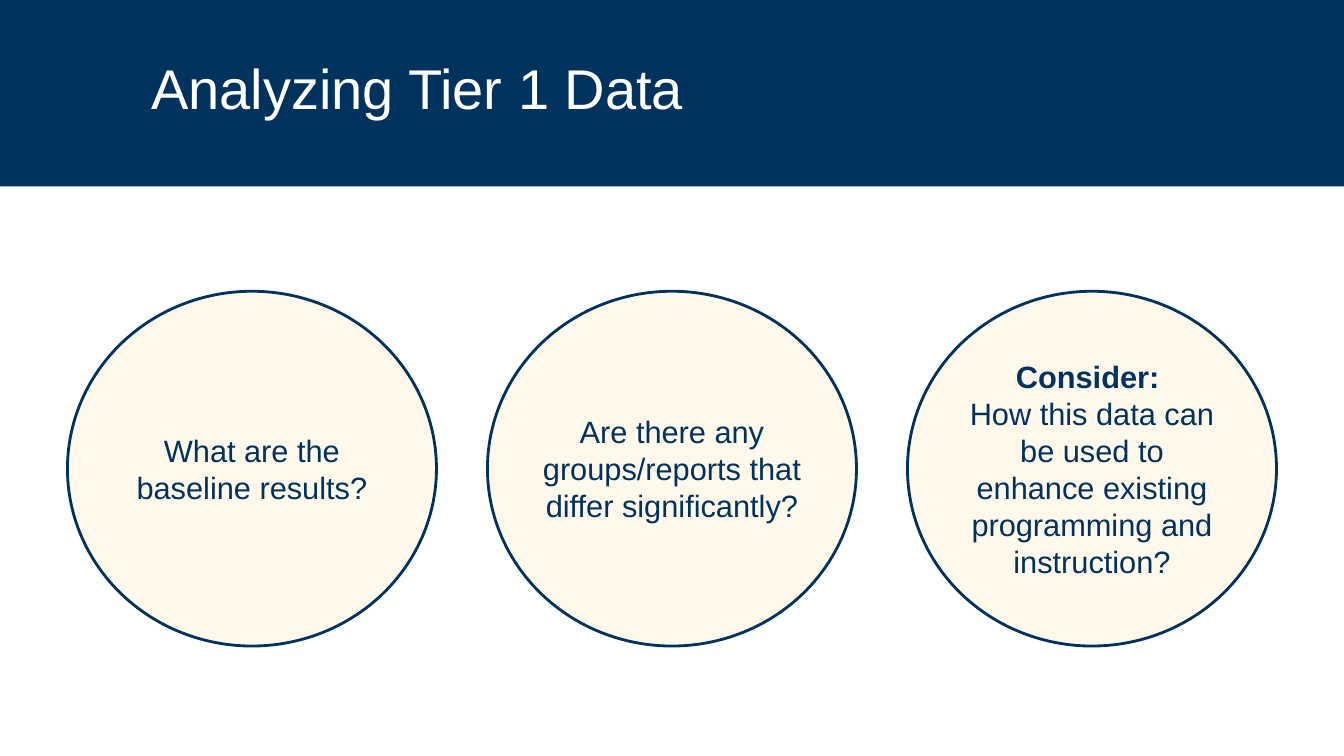
from pptx import Presentation
from pptx.dml.color import RGBColor
from pptx.enum.shapes import MSO_SHAPE as Preset
from pptx.enum.text import MSO_ANCHOR as Anchor, PP_ALIGN as Align
from pptx.util import Cm, Pt

NAVY = RGBColor(0x00, 0x32, 0x5E)
CREAM = RGBColor(0xFF, 0xF8, 0xEB)
WHITE = RGBColor(0xFF, 0xFF, 0xFF)

PAGE_WIDTH, PAGE_HEIGHT = 33.87, 19.05
BANNER_HEIGHT = 4.7
CIRCLE_WIDTH, CIRCLE_HEIGHT = 9.3, 8.94
CIRCLE_TOP, SIDE_MARGIN = 7.34, 1.7

# Each question is a list of (text, bold) paragraphs.
QUESTIONS = [
    [("What are the baseline results?", False)],
    [("Are there any groups/reports that differ significantly?", False)],
    [("Consider: ", True),
     ("How this data can be used to enhance existing programming and instruction?", False)],
]


def write(para, text, size=22, color=NAVY, bold=False, align=Align.CENTER, spacing=None):
    para.alignment = align
    para.line_spacing = spacing
    span = para.add_run()
    span.text = text
    span.font.name = "Arial"
    span.font.size = Pt(size)
    span.font.bold = bold
    span.font.color.rgb = color


class Page:
    """Holds the current slide and draws its elements, with lengths in centimetres."""

    def __init__(self, deck):
        self.shapes = deck.slides.add_slide(deck.slide_layouts[6]).shapes

    def shape(self, preset, left, top, width, height, fill, line=None):
        shape = self.shapes.add_shape(preset, Cm(left), Cm(top), Cm(width), Cm(height))
        shape.shadow.inherit = False
        shape.fill.solid()
        shape.fill.fore_color.rgb = fill
        if line is None:
            shape.line.fill.background()
        else:
            shape.line.color.rgb = line
            shape.line.width = Pt(2)
        return shape

    def title(self, text, left, top, width, height):
        box = self.shapes.add_textbox(Cm(left), Cm(top), Cm(width), Cm(height))
        box.text_frame.word_wrap = True
        write(box.text_frame.paragraphs[0], text, size=40, color=WHITE,
              align=Align.LEFT, spacing=0.9)

    def circle(self, paragraphs, left):
        circle = self.shape(Preset.OVAL, left, CIRCLE_TOP, CIRCLE_WIDTH, CIRCLE_HEIGHT,
                            CREAM, line=NAVY)
        frame = circle.text_frame
        frame.word_wrap = True
        frame.vertical_anchor = Anchor.MIDDLE
        frame.margin_left = frame.margin_right = 0
        frame.margin_top = frame.margin_bottom = 0
        for index, (text, bold) in enumerate(paragraphs):
            para = frame.add_paragraph() if index else frame.paragraphs[0]
            write(para, text, bold=bold)


def main():
    deck = Presentation()
    deck.slide_width, deck.slide_height = Cm(PAGE_WIDTH), Cm(PAGE_HEIGHT)
    page = Page(deck)
    page.shape(Preset.RECTANGLE, 0, 0, PAGE_WIDTH, BANNER_HEIGHT, NAVY)
    page.title("Analyzing Tier 1 Data", 3.56, 1.42, 28.17, 2.74)

    pitch = (PAGE_WIDTH - 2 * SIDE_MARGIN - CIRCLE_WIDTH) / (len(QUESTIONS) - 1)
    for index, paragraphs in enumerate(QUESTIONS):
        page.circle(paragraphs, SIDE_MARGIN + index * pitch)
    deck.save("out.pptx")


if __name__ == "__main__":
    main()
